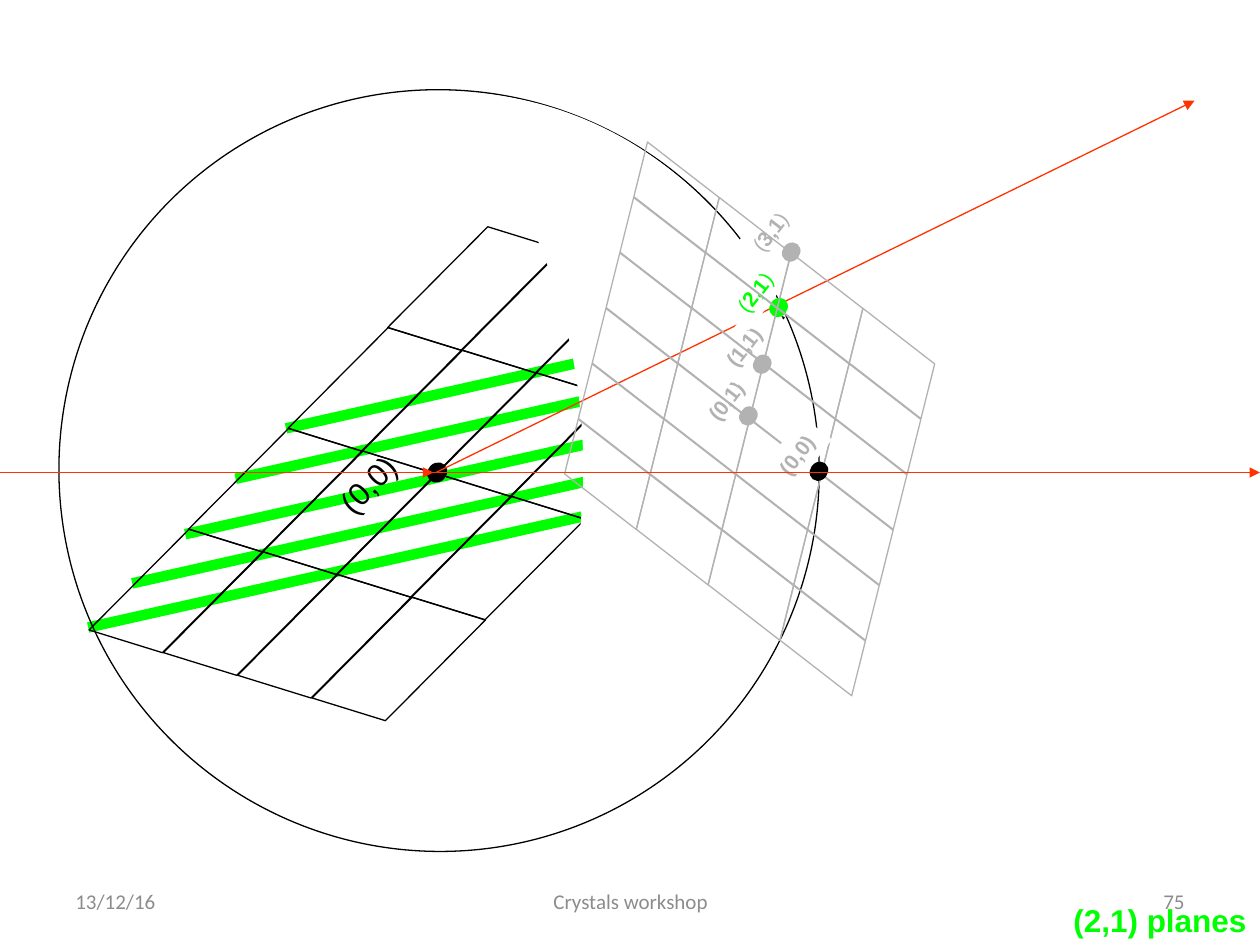
from dataclasses import dataclass

from lxml import etree
from pptx import Presentation
from pptx.dml.color import RGBColor
from pptx.enum.shapes import MSO_CONNECTOR, MSO_SHAPE
from pptx.enum.text import MSO_ANCHOR, MSO_AUTO_SIZE, PP_ALIGN
from pptx.oxml.ns import qn
from pptx.util import Inches, Pt

STRAIGHT = MSO_CONNECTOR.STRAIGHT
CELL, OVAL, MOON = MSO_SHAPE.FLOWCHART_DATA, MSO_SHAPE.OVAL, MSO_SHAPE.MOON
LEFT, CENTER, RIGHT = PP_ALIGN.LEFT, PP_ALIGN.CENTER, PP_ALIGN.RIGHT
TOP, MIDDLE = MSO_ANCHOR.TOP, MSO_ANCHOR.MIDDLE


@dataclass(frozen=True)
class Theme:
    black: str = "000000"
    white: str = "FFFFFF"
    gray: str = "B2B2B2"
    footer: str = "8C8C8C"
    green: str = "00FF00"
    red: str = "FF3300"
    font: str = "Arial"
    footer_font: str = "Calibri"
    large: int = 18
    small: int = 12
    thin: float = 0.75
    thick: int = 6


T = Theme()


def add_text(parent, runs, box, size=T.small, color=T.black, font=T.font, rot=0,
             fill=None, align=LEFT, anchor=TOP, wrap=False):
    """Runs are (text, bold) pairs."""
    sp = parent.shapes.add_textbox(*map(Inches, box))
    sp.rotation = rot
    if fill:
        sp.fill.solid()
        sp.fill.fore_color.rgb = RGBColor.from_string(fill)
    tf = sp.text_frame
    tf.word_wrap = wrap
    tf.vertical_anchor = anchor
    if not wrap:
        tf.auto_size = MSO_AUTO_SIZE.SHAPE_TO_FIT_TEXT
    p = tf.paragraphs[0]
    p.alignment = align
    for text, bold in runs:
        r = p.add_run()
        r.text = text
        r.font.name, r.font.size, r.font.bold = font, Pt(size), bold
        r.font.color.rgb = RGBColor.from_string(color)


def add_figure(parent, kind, box, fill=None, line=None, rot=0, flip=False):
    sp = parent.shapes.add_shape(kind, *map(Inches, box))
    sp.shadow.inherit = False
    sp.rotation = rot
    if fill:
        sp.fill.solid()
        sp.fill.fore_color.rgb = RGBColor.from_string(fill)
    else:
        sp.fill.background()
    if line:
        sp.line.color.rgb = RGBColor.from_string(line)
        sp.line.width = Pt(T.thin)
    else:
        sp.line.fill.background()
    if flip:
        sp._element.spPr.find(qn("a:xfrm")).set("flipH", "1")
    return sp


def add_line(parent, start, end, color=T.red, width=T.thin, arrow=False):
    c = parent.shapes.add_connector(STRAIGHT, *map(Inches, start + end))
    c.line.color.rgb = RGBColor.from_string(color)
    c.line.width = Pt(width)
    if arrow:
        ln = c.line._get_or_add_ln()
        etree.SubElement(ln, qn("a:tailEnd"), type="triangle")
    etree.SubElement(c._element.spPr, qn("a:effectLst"))


def add_cells(parent, origin, size, col_step, row_step, rows, rot, color):
    for row in rows:
        for col in range(4):
            x, y = (o + col * c + row * r for o, c, r in zip(origin, col_step, row_step))
            add_figure(parent, CELL, (x, y, *size), line=color, rot=rot, flip=True)


def add_dot(parent, x, y, color, rot, line=None):
    add_figure(parent, OVAL, (x, y, 0.16, 0.14), fill=color, line=line, rot=rot)


def real_lattice(s, left, top):
    rot = 314.8
    group = s.shapes.add_group_shape()
    for dx, dy in [(1.57, 1.6), (0, 3.18), (0.35, 2.83), (0.77, 2.44), (1.17, 2)]:
        x, y = left + dx, top + dy
        add_line(group, (x, y), (x + 3.92, y - 0.88), T.green, T.thick)
    add_cells(group, (left - 0.01, top + 2.62), (1.41, 0.54), (0.59, 0.18),
              (0.79, -0.8), range(4), rot, T.black)
    add_text(group, [("(0,0)", False)], (left + 1.86, top + 1.84, 0.72, 0.4),
             size=T.large, rot=rot)
    add_dot(group, left + 2.69, top + 1.88, T.black, rot, T.black)


def reciprocal_lattice(s, left, top):
    rot = 307.8
    group = s.shapes.add_group_shape()

    def cells(rows):
        add_cells(group, (left + 0.43, top + 0.24), (0.9, 0.41), (0.57, 0.44),
                  (-0.11, 0.44), rows, 37.8, T.gray)

    def dot(dx, dy, color):
        add_dot(group, left + dx, top + dy, color, rot)

    def label(index, dx, dy, color=T.gray, bold_brackets=True):
        runs = [("(", bold_brackets), (index, True), (")", bold_brackets)]
        if bold_brackets:
            runs = [(f"({index})", True)]
        add_text(group, runs, (left + dx, top + dy, 0.54, 0.3), color=color,
                 rot=rot, fill=T.white)

    cells(range(4, 6))
    dot(1.37, 2.11, T.gray)
    dot(1.61, 1.25, T.green)
    dot(1.71, 0.81, T.gray)
    label("0,1", 1, 1.91)
    label("1,1", 1.14, 1.48)
    label("2,1", 1.23, 1.05, T.green, bold_brackets=False)
    label("3,1", 1.35, 0.57, bold_brackets=False)
    cells(range(4))
    dot(1.93, 2.55, T.black)
    label("0,0", 1.56, 2.34)
    dot(1.48, 1.7, T.gray)


def ewald_circle(s, left, top):
    """Circle, incoming and diffracted beams, and the crescent that masks the right side."""
    beam_y = top + 3.04
    add_figure(s, OVAL, (left, top, 6.03, 6.05), line=T.black, rot=331.2)
    add_line(s, (0, beam_y), (left + 2.97, beam_y), arrow=True)
    moon = add_figure(s, MOON, (left + 3.09, top + 0.02, 2.89, 5.98), fill=T.white, flip=True)
    moon.adjustments[0] = 0.63
    add_line(s, (left + 2.99, beam_y), (left + 9.01, top + 0.09), arrow=True)


def footer(s, top, height):
    for text, left, width, align in [("13/12/16", 0.5, 2.33, LEFT),
                                     ("Crystals workshop", 3.42, 3.17, CENTER),
                                     ("75", 7.17, 2.33, RIGHT)]:
        add_text(s, [(text, False)], (left, top, width, height), color=T.footer,
                 font=T.footer_font, align=align, anchor=MIDDLE, wrap=True)


def main():
    prs = Presentation()
    prs.slide_width, prs.slide_height = Inches(10), Inches(7.5)
    s = prs.slides.add_slide(prs.slide_layouts[6])
    footer(s, 6.95, 0.4)
    real_lattice(s, 0.7, 1.8)
    ewald_circle(s, 0.47, 0.71)
    add_text(s, [("(2,1) planes", True)], (8.42, 7.1, 1.58, 0.4), size=T.large, color=T.green)
    reciprocal_lattice(s, 4.49, 1.12)
    add_line(s, (0, 3.75), (10, 3.75), arrow=True)
    prs.save("out.pptx")


if __name__ == "__main__":
    main()
